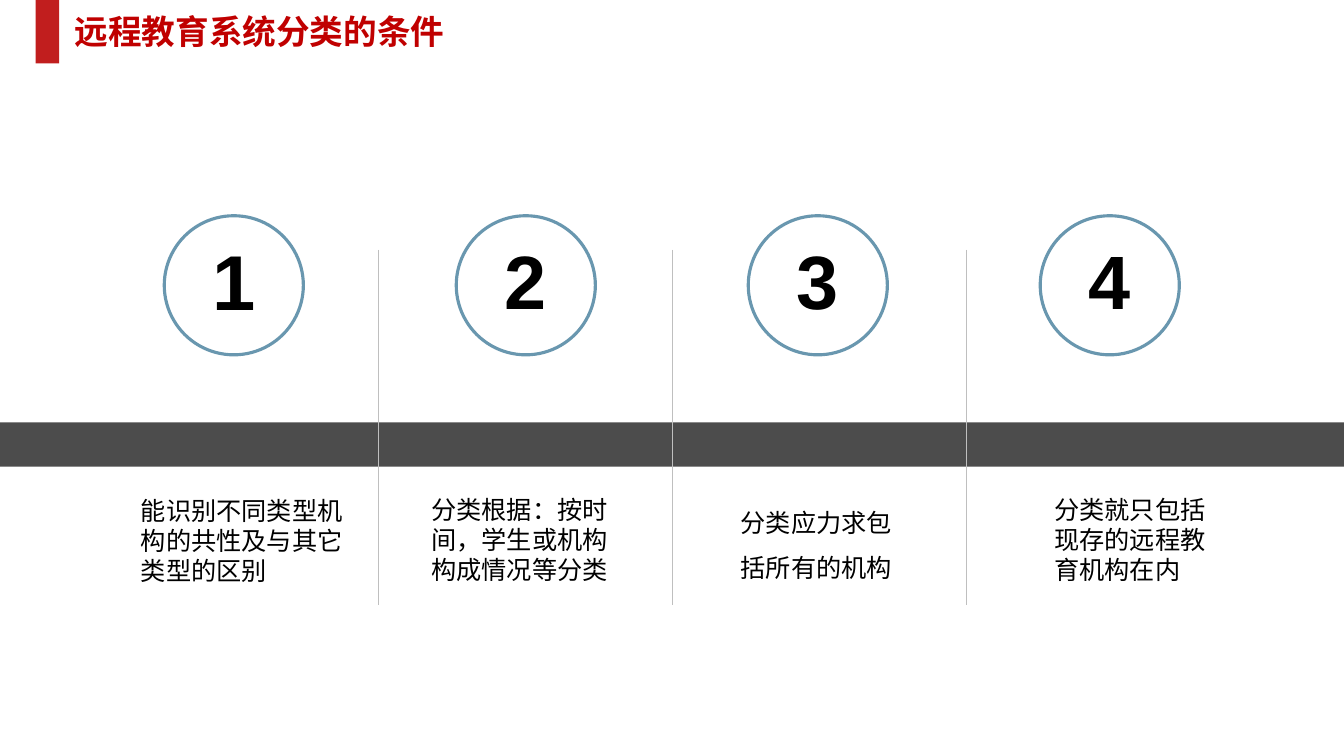
import pptx
import pptx.util
import pptx.dml.color
import pptx.enum.shapes
import pptx.enum.text
import pptx.oxml.ns
import lxml.etree

SHAPE = pptx.enum.shapes.MSO_SHAPE
ALIGN = pptx.enum.text.PP_ALIGN
ANCHOR = pptx.enum.text.MSO_ANCHOR
FIT = pptx.enum.text.MSO_AUTO_SIZE
qn = pptx.oxml.ns.qn


def rgb(value):
    return pptx.dml.color.RGBColor.from_string(value)


class Deck:
    COLS, ROWS = 40, 30
    CJK, LATIN = "Noto Sans CJK SC", "Arial"
    RED, TITLE, BLACK, WHITE = "C11E1E", "C00000", "000000", "FFFFFF"
    RING, RULE = "6997AF", "BFBFBF"

    def __init__(self):
        self.prs = pptx.Presentation()
        self.prs.slide_width = pptx.util.Inches(13.33)
        self.prs.slide_height = pptx.util.Inches(7.5)
        self.s = self.prs.slides.add_slide(self.prs.slide_layouts[5])

    def x(self, cols):
        return round(self.prs.slide_width * cols / self.COLS)

    def y(self, rows):
        return round(self.prs.slide_height * rows / self.ROWS)

    def box(self, left, top, width, height):
        return self.x(left), self.y(top), self.x(width), self.y(height)

    def set_text(self, tf, text, size, font, color, bold=False, align=ALIGN.LEFT, spacing=1.0):
        p = tf.paragraphs[0]
        p.text = text
        p.alignment = align
        p.line_spacing = spacing
        p.font.size = pptx.util.Pt(size)
        p.font.bold = bold
        p.font.name = font
        p.font.color.rgb = rgb(color)
        props = p._p.get_or_add_pPr().find(qn("a:defRPr"))
        lxml.etree.SubElement(props, qn("a:ea")).set("typeface", font)

    def title(self, text, *place):
        sp = self.s.shapes.title
        sp.left, sp.top, sp.width, sp.height = self.box(*place)
        tf = sp.text_frame
        tf.word_wrap = False
        tf.auto_size = FIT.SHAPE_TO_FIT_TEXT
        tf.vertical_anchor = ANCHOR.TOP
        self.set_text(tf, text, 24, self.CJK, self.TITLE, bold=True)

    def shape(self, kind, fill, *place, alpha=None):
        sp = self.s.shapes.add_shape(kind, *self.box(*place))
        sp.shadow.inherit = False
        sp.fill.solid()
        sp.fill.fore_color.rgb = rgb(fill)
        sp.line.fill.background()
        if alpha is not None:
            color = sp._element.spPr.find(qn("a:solidFill"))[0]
            lxml.etree.SubElement(color, qn("a:alpha")).set("val", str(alpha * 1000))
        return sp

    def rule(self, col, top, bottom):
        line = self.s.shapes.add_connector(
            pptx.enum.shapes.MSO_CONNECTOR.STRAIGHT,
            self.x(col), self.y(top), self.x(col), self.y(bottom))
        line.line.color.rgb = rgb(self.RULE)
        line.line.width = pptx.util.Pt(0.5)
        lxml.etree.SubElement(line._element.spPr, qn("a:effectLst"))

    def number(self, text, size, *place):
        sp = self.shape(SHAPE.OVAL, self.WHITE, *place)
        sp.line.color.rgb = rgb(self.RING)
        sp.line.width = pptx.util.Pt(2.25)
        tf = sp.text_frame
        tf.word_wrap = False
        tf.vertical_anchor = ANCHOR.MIDDLE
        self.set_text(tf, text, size, self.LATIN, self.BLACK, bold=True,
                      align=ALIGN.CENTER, spacing=0.9)

    def caption(self, text, spacing, *place):
        tf = self.s.shapes.add_textbox(*self.box(*place)).text_frame
        tf.word_wrap = True
        tf.auto_size = FIT.SHAPE_TO_FIT_TEXT
        self.set_text(tf, text, 18, self.CJK, self.BLACK, spacing=spacing)


CONDITIONS = [
    ("能识别不同类型机构的共性及与其它类型的区别", 55.5, 1.0, 3.9, 19.44, 6.6),
    ("分类根据：按时间，学生或机构构成情况等分类", 54, 1.0, 12.54, 19.4, 6.48),
    ("分类应力求包括所有的机构", 54, 1.5, 21.75, 19.32, 5.76),
    ("分类就只包括现存的远程教育机构在内", 54, 1.0, 31.08, 19.4, 5.43),
]


def main():
    deck = Deck()
    deck.shape(SHAPE.RECTANGLE, deck.RED, 1.06, 0, 0.7, 2.52)
    deck.title("远程教育系统分类的条件", 1.92, 0.24, 11.7, 2)
    deck.shape(SHAPE.RECTANGLE, deck.BLACK, 0, 16.76, 40, 1.76, alpha=70)
    for i in range(len(CONDITIONS) - 1):
        deck.rule(11.25 + 8.75 * i, 9.92, 24)
    for i, (text, size, spacing, left, top, width) in enumerate(CONDITIONS):
        deck.number(str(i + 1), size, 4.89 + 8.69 * i, 8.56, 4.14, 5.52)
        deck.caption(text, spacing, left, top, width, 4.04)
    deck.prs.save("out.pptx")


if __name__ == "__main__":
    main()
